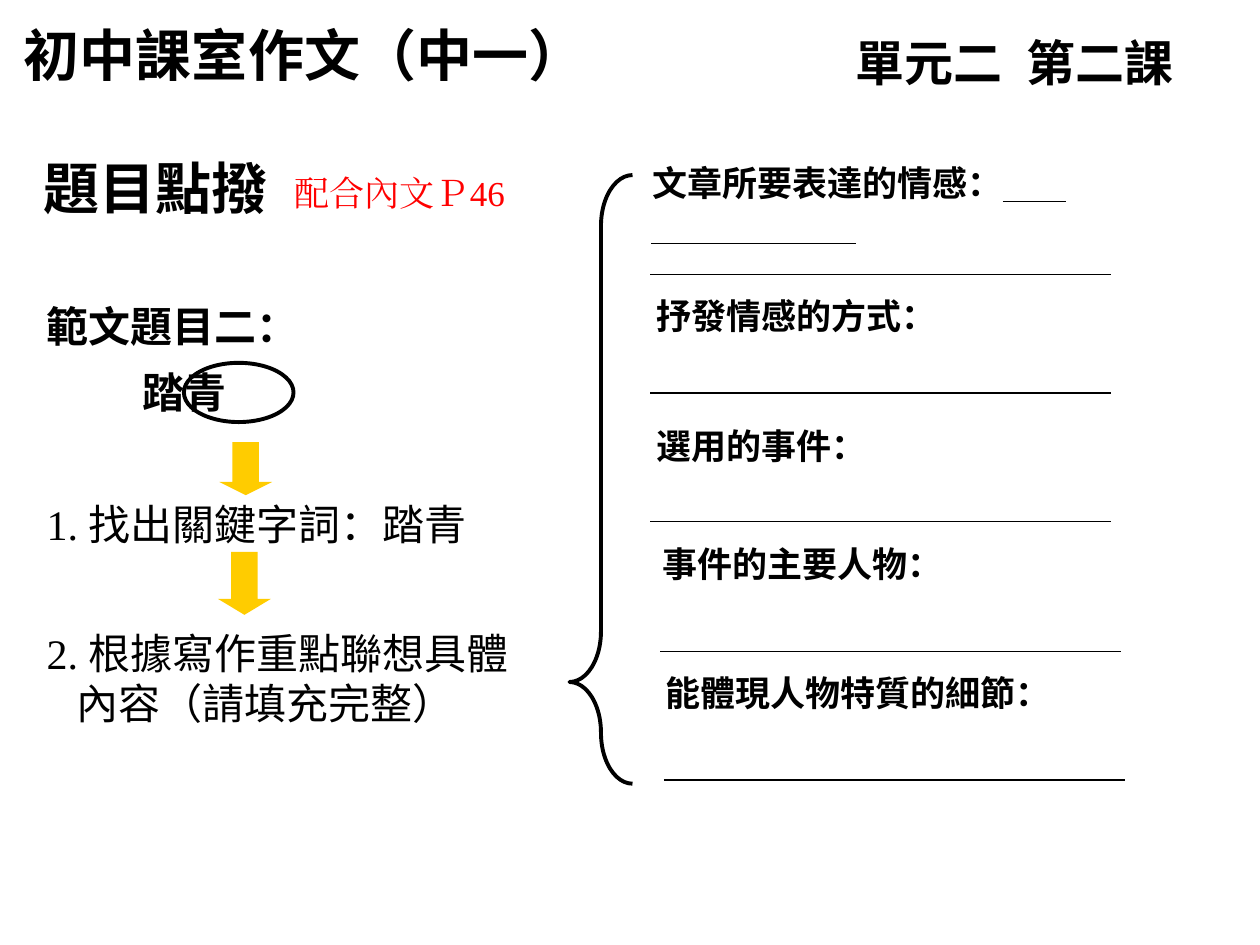
from lxml.etree import SubElement
from pptx import Presentation
from pptx.dml.color import RGBColor
from pptx.enum.shapes import MSO_CONNECTOR, MSO_SHAPE
from pptx.enum.text import MSO_ANCHOR, MSO_AUTO_SIZE, PP_ALIGN
from pptx.oxml.ns import qn
from pptx.util import Inches, Pt

WIDE, HIGH = Inches(10), Inches(7.5)
COLS, ROWS = 100, 75
SANS, SERIF = "DejaVu Sans", "Times New Roman"
INK, RED, GOLD = "000000", "FF0000", "FFCC00"


def col(n):
    """Return the length of n grid columns."""
    return round(WIDE * n / COLS)


def row(n):
    """Return the length of n grid rows."""
    return round(HIGH * n / ROWS)


def hue(code):
    """Turn a hex string into a colour."""
    return RGBColor.from_string(code)


def place(item, left, top, width, height):
    """Put an item on the grid."""
    item.left, item.top = col(left), row(top)
    item.width, item.height = col(width), row(height)


def add_run(para, text, face, size, bold=False, ink=INK, gap=0):
    """Add one styled run, with letter gap in points."""
    run = para.add_run()
    run.text = text
    font = run.font
    font.name, font.size, font.bold = face, Pt(size), bold
    font.color.rgb = hue(ink)
    props = run._r.get_or_add_rPr()
    SubElement(props, qn("a:ea")).set("typeface", face)
    if gap:
        props.set("spc", str(gap * 100))


def write(item, paras, lead=1.0):
    """Fill an item with (indent, runs) paragraphs."""
    frame = item.text_frame
    frame.word_wrap = True
    frame.auto_size = MSO_AUTO_SIZE.NONE
    frame.vertical_anchor = MSO_ANCHOR.TOP
    for num, (inset, runs) in enumerate(paras):
        para = frame.add_paragraph() if num else frame.paragraphs[0]
        props = para._p.get_or_add_pPr()
        props.set("marL", str(col(inset)))
        props.set("indent", "0")
        SubElement(props, qn("a:buNone"))
        para.alignment = PP_ALIGN.LEFT
        para.space_before = Pt(0)
        para.line_spacing = lead
        for run in runs:
            add_run(para, *run)


def add_text(slide, box, paras, lead=1.0):
    """Add a text box on the grid."""
    item = slide.shapes.add_textbox(0, 0, 0, 0)
    place(item, *box)
    write(item, paras, lead)


def add_form(slide, kind, box, fill=None, line=None, adjust=()):
    """Add a preset shape on the grid."""
    form = slide.shapes.add_shape(kind, 0, 0, 0, 0)
    place(form, *box)
    form.shadow.inherit = False
    for num, share in enumerate(adjust):
        form.adjustments[num] = share
    if fill:
        form.fill.solid()
        form.fill.fore_color.rgb = hue(fill)
    else:
        form.fill.background()
    if line:
        form.line.color.rgb = hue(line)
        form.line.width = Pt(2.25)
    else:
        form.line.fill.background()


def add_rule(slide, left, top, width):
    """Add a thin level line to write on."""
    rule = slide.shapes.add_connector(
        MSO_CONNECTOR.STRAIGHT, col(left), row(top), col(left + width), row(top))
    rule.line.color.rgb = hue(INK)
    rule.line.width = Pt(0.75)
    SubElement(rule._element.spPr, qn("a:effectLst"))


def add_heads(slide):
    """Add the title and the headings."""
    title = slide.shapes.title
    place(title, 0.9, 1.1, 52.2, 6.3)
    write(title, [(0, [("初中課室作文（中一）", "Karla", 32, True)])])
    add_text(slide, (66.9, 2.1, 33.1, 5.7), [(0, [
        ("單元二", "Karla", 28, True),
        (" ", "Karla", 28, True, INK, 7),
        ("第二課", "Karla", 28, True)])])
    add_text(slide, (2.5, 11.7, 30.8, 6.3),
             [(0, [("題目點撥", "Arial", 32, True)])])
    add_text(slide, (22.4, 13.1, 24.7, 4.3),
             [(0, [("配合內文Ｐ46", SERIF, 20, False, RED)])])


def add_steps(slide):
    """Add the topic and the two steps that follow from it."""
    add_text(slide, (2.7, 22.2, 50, 11.4), [
        (0, [("範文題目二：", SANS, 24, True)]),
        (7.6, [("踏青", SANS, 24, True)])], 1.3)
    add_form(slide, MSO_SHAPE.OVAL, (14.6, 28.8, 8.7, 4.7), line=INK)
    first, second = list(slide.placeholders)[1:]
    place(first, 2.7, 39.1, 48.8, 5)
    write(first, [(0, [("1. ", SERIF, 24), ("找出關鍵字詞：踏青", SANS, 24)])])
    place(second, 2.7, 49.3, 41.7, 9)
    write(second, [
        (0, [("2. ", SERIF, 24), ("根據寫作重點聯想具體", SANS, 24)]),
        (2.4, [("內容（請填充完整）", SANS, 24)])])
    for left, top, height, head in ((17.4, 35.1, 4.2, 0.25), (17.3, 43.8, 5, 0.3)):
        add_form(slide, MSO_SHAPE.DOWN_ARROW, (left, top, 4.2, height),
                 fill=GOLD, adjust=(0.5, head))


def add_blanks(slide):
    """Add the brace and the prompts with lines to fill in."""
    add_form(slide, MSO_SHAPE.LEFT_BRACE, (45.2, 13.9, 5, 48.3),
             line=INK, adjust=(0.806, 0.833))
    prompts = (
        ("文章所要表達的情感：", 50.8, 12.3, 51.6, 21.8),
        ("抒發情感的方式：", 51.1, 22.9, 51.6, 31.2),
        ("選用的事件：", 51.1, 33.2, 51.6, 41.4),
        ("事件的主要人物：", 51.6, 42.6, 52.4, 51.7),
        ("能體現人物特質的細節：", 51.8, 52.8, 52.7, 61.9))
    for text, left, top, start, base in prompts:
        add_text(slide, (left, top, 38.3, 4.3), [(0, [(text, SANS, 20, True)])])
        add_rule(slide, start, base, 36.6)
    add_rule(slide, 79.6, 16, 5)
    add_rule(slide, 51.7, 19.3, 16.2)


def main():
    """Build and save the slide."""
    deck = Presentation()
    deck.slide_width, deck.slide_height = WIDE, HIGH
    slide = deck.slides.add_slide(deck.slide_layouts[3])
    add_heads(slide)
    add_steps(slide)
    add_blanks(slide)
    deck.save("out.pptx")


if __name__ == "__main__":
    main()
